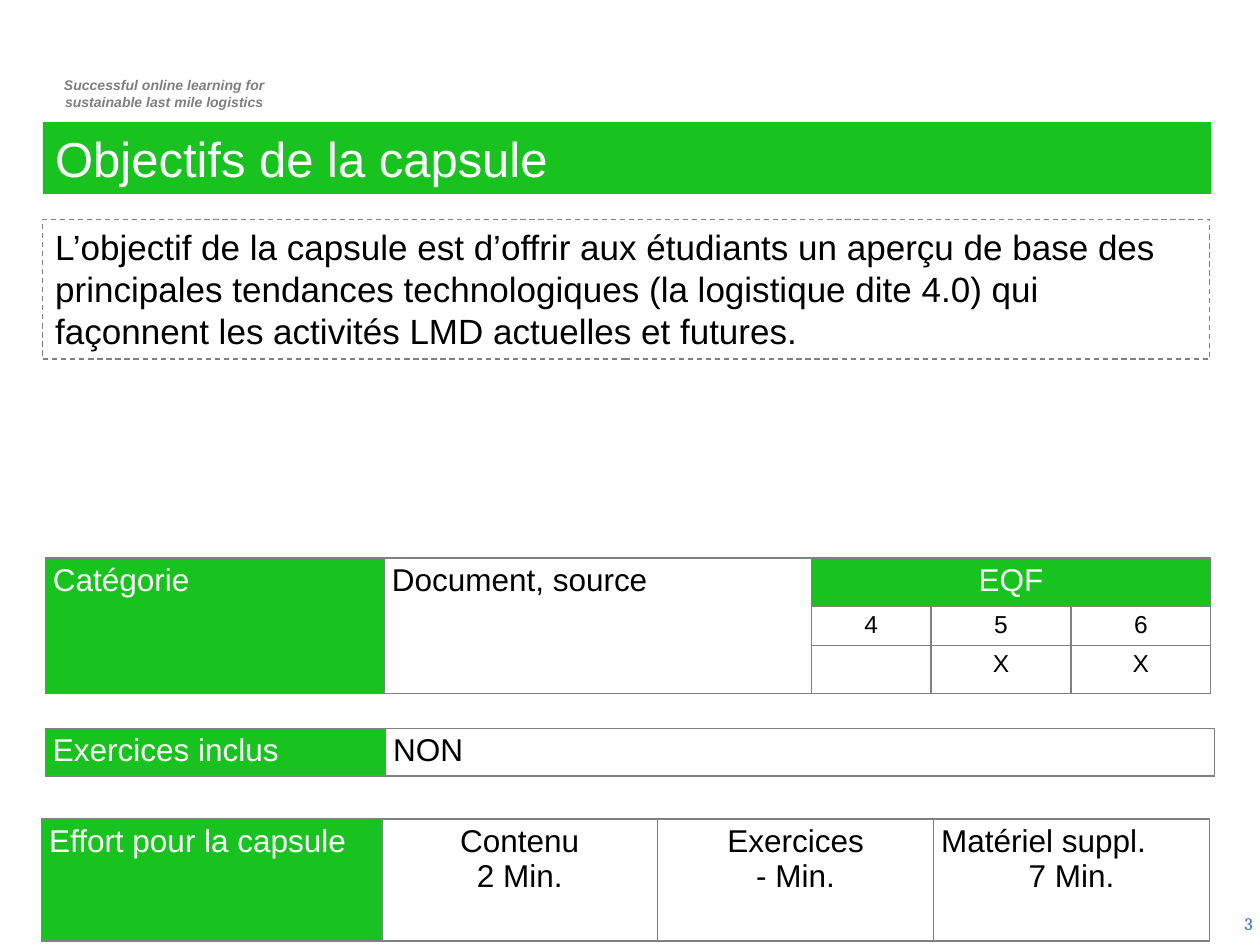
from lxml import etree
from pptx import Presentation
from pptx.dml.color import RGBColor
from pptx.enum.dml import MSO_LINE
from pptx.enum.shapes import MSO_SHAPE
from pptx.enum.text import MSO_ANCHOR, PP_ALIGN
from pptx.oxml.ns import qn
from pptx.util import Inches, Pt

GREEN = RGBColor(0x18, 0xC3, 0x20)
GREY = RGBColor(0x80, 0x80, 0x80)
SLOGAN = RGBColor(0x7F, 0x7F, 0x7F)
BLUE = RGBColor(0x33, 0x66, 0xCC)
BLACK = RGBColor(0, 0, 0)
WHITE = RGBColor(0xFF, 0xFF, 0xFF)
RECT = MSO_SHAPE.RECTANGLE
DASH = MSO_LINE.DASH
TOP, MIDDLE = MSO_ANCHOR.TOP, MSO_ANCHOR.MIDDLE
LEFT, CENTER, RIGHT = PP_ALIGN.LEFT, PP_ALIGN.CENTER, PP_ALIGN.RIGHT
COLS, ROWS = 100, 75


def write(tf, text, size=18, color=BLACK, font="Arial", aligns=(LEFT,), bold=False, italic=False):
    """Fill a text frame, one paragraph per line of text."""
    lines = text.split("\n")
    for i, line in enumerate(lines):
        p = tf.paragraphs[0] if i == 0 else tf.add_paragraph()
        p.alignment = aligns[min(i, len(aligns) - 1)]
        r = p.add_run()
        r.text = line
        r.font.name, r.font.size = font, Pt(size)
        r.font.bold, r.font.italic = bold, italic
        r.font.color.rgb = color


class Deck:
    """Draw styled elements on one slide, measured in grid columns and rows."""

    def __init__(self, width, height):
        self.prs = Presentation()
        self.prs.slide_width, self.prs.slide_height = Inches(width), Inches(height)
        self.s = self.prs.slides.add_slide(self.prs.slide_layouts[6])

    def x(self, cols):
        return round(self.prs.slide_width * cols / COLS)

    def y(self, rows):
        return round(self.prs.slide_height * rows / ROWS)

    def box(self, left, top, width, height):
        return self.x(left), self.y(top), self.x(width), self.y(height)

    def label(self, text, *area, anchor=TOP, **style):
        tf = self.s.shapes.add_textbox(*self.box(*area)).text_frame
        tf.word_wrap, tf.vertical_anchor = True, anchor
        write(tf, text, **style)

    def panel(self, text, *area, fill=None, line=None, **style):
        sp = self.s.shapes.add_shape(RECT, *self.box(*area))
        sp.shadow.inherit = False
        if fill is None:
            sp.fill.background()
        else:
            sp.fill.solid()
            sp.fill.fore_color.rgb = fill
        if line is None:
            sp.line.fill.background()
        else:
            sp.line.color.rgb, sp.line.width = line, Pt(0.75)
            sp.line.dash_style = DASH
        sp.text_frame.vertical_anchor = TOP
        write(sp.text_frame, text, **style)

    def cell(self, cell, fill=None):
        cell.margin_left = cell.margin_right = Inches(0.06)
        cell.margin_top = cell.margin_bottom = Inches(0.04)
        tcPr = cell._tc.get_or_add_tcPr()
        for side in ("a:lnL", "a:lnR", "a:lnT", "a:lnB"):
            ln = etree.SubElement(tcPr, qn(side), w=str(Pt(1)))
            paint = etree.SubElement(ln, qn("a:solidFill"))
            etree.SubElement(paint, qn("a:srgbClr"), val=str(GREY))
        if fill is None:
            cell.fill.background()
        else:
            cell.fill.solid()
            cell.fill.fore_color.rgb = fill

    def table(self, left, top, widths, heights, entries, heads, merges=()):
        area = self.box(left, top, sum(widths), sum(heights))
        table = self.s.shapes.add_table(len(heights), len(widths), *area).table
        table.first_row = table.horz_banding = False
        for column, width in zip(table.columns, widths):
            column.width = self.x(width)
        for row, height in zip(table.rows, heights):
            row.height = self.y(height)
        for r in range(len(heights)):
            for c in range(len(widths)):
                self.cell(table.cell(r, c), GREEN if (r, c) in heads else None)
        for first, last in merges:
            table.cell(*first).merge(table.cell(*last))
        for (r, c), (text, style) in entries.items():
            color = WHITE if (r, c) in heads else BLACK
            write(table.cell(r, c).text_frame, text, color=color, **style)


def main():
    deck = Deck(10, 7.5)
    centered = {"aligns": (CENTER,)}
    small = {"size": 14, **centered}

    deck.label("Successful online learning for\nsustainable last mile logistics", 2.9, 5.6, 20.3, 3.7,
               size=8, color=SLOGAN, bold=True, italic=True, **centered)
    deck.label("3", 77.1, 71.3, 23.3, 4, anchor=MIDDLE,
               size=10, color=BLUE, font="Cambria", aligns=(RIGHT,))
    deck.panel("Objectifs de la capsule", 3.4, 9.7, 92.7, 5.7, fill=GREEN, size=28, color=WHITE)
    deck.panel("L’objectif de la capsule est d’offrir aux étudiants un aperçu de base des "
               "principales tendances technologiques (la logistique dite 4.0) qui "
               "façonnent les activités LMD actuelles et futures.",
               3.4, 17.4, 92.6, 11.1, line=GREY, size=20)

    levels = {(1, c): (level, small) for c, level in enumerate("456", 2)}
    marks = {(2, c): ("X", small) for c in (3, 4)}
    deck.table(3.6, 44.3, (26.9, 33.9, 9.5, 11.1, 11.1), (3.7, 3.1, 3.7),
               {(0, 0): ("Catégorie", {}), (0, 1): ("Document, source", {}),
                (0, 2): ("EQF", centered), **levels, **marks},
               heads={(0, 0), (0, 2)},
               merges=(((0, 0), (2, 0)), ((0, 1), (2, 1)), ((0, 2), (0, 4))))
    deck.table(3.6, 57.8, (27, 65.8), (3.7,),
               {(0, 0): ("Exercices inclus", {}), (0, 1): ("NON", {})}, heads={(0, 0)})
    deck.table(3.3, 65, (27, 21.9, 21.9, 21.9), (9.7,),
               {(0, 0): ("Effort pour la capsule", {}),
                (0, 1): ("Contenu\n2 Min.", centered),
                (0, 2): ("Exercices\n- Min.", centered),
                (0, 3): ("Matériel suppl.\n7 Min.", {"aligns": (LEFT, CENTER)})},
               heads={(0, 0)})
    deck.prs.save("out.pptx")


if __name__ == "__main__":
    main()
